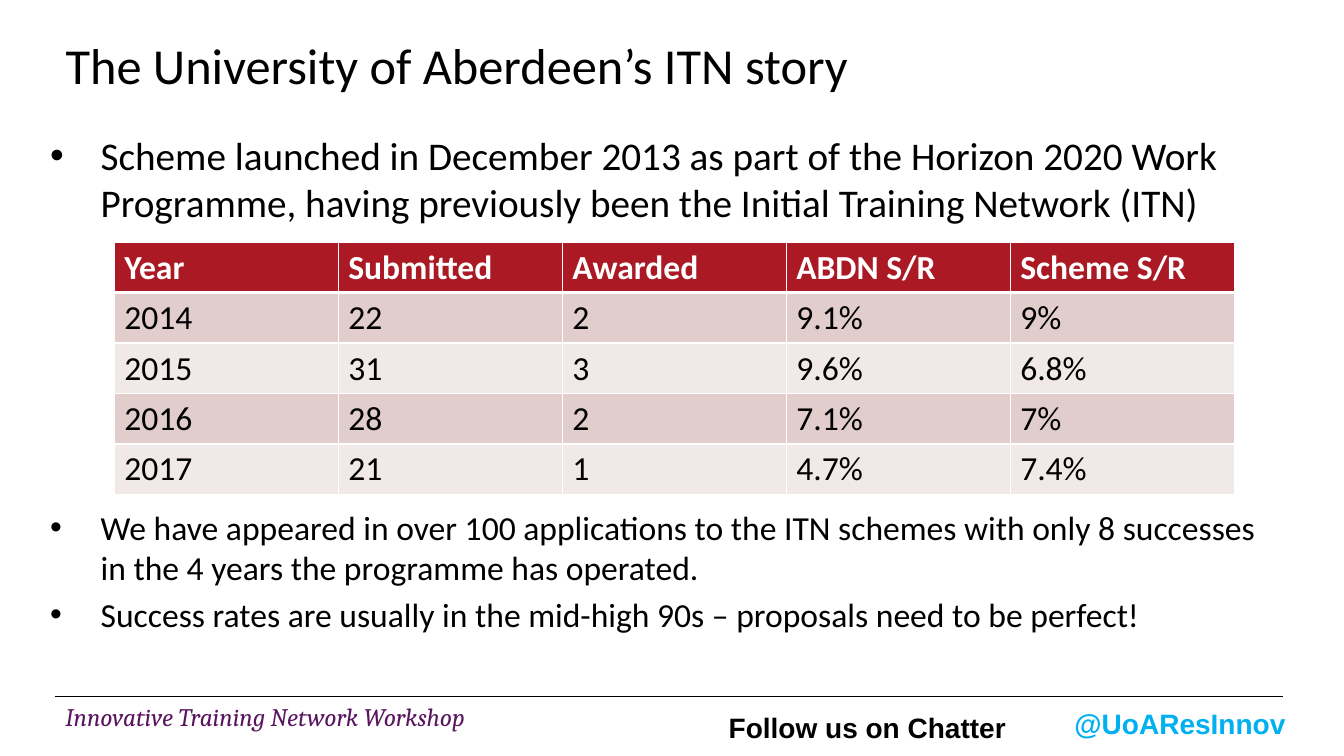
from dataclasses import dataclass

from lxml import etree
from pptx import Presentation
from pptx.dml.color import RGBColor
from pptx.enum.shapes import MSO_CONNECTOR
from pptx.enum.text import MSO_ANCHOR, PP_ALIGN
from pptx.oxml.ns import qn
from pptx.util import Pt

LEFT = PP_ALIGN.LEFT
TOP, MIDDLE = MSO_ANCHOR.TOP, MSO_ANCHOR.MIDDLE
STRAIGHT = MSO_CONNECTOR.STRAIGHT
TITLE_ONLY = 5


@dataclass(frozen=True)
class Theme:
    text: str = "000000"
    white: str = "FFFFFF"
    plum: str = "59155F"
    sky: str = "00B0F0"
    header: str = "AB1A24"
    bands: tuple = ("E2CDCD", "F1E8E8")
    body_font: str = "Calibri"
    footer_font: str = "Cambria"
    social_font: str = "Arial"
    title_size: int = 36
    lead_size: int = 28
    body_size: int = 24
    social_size: int = 20
    footer_size: int = 18


THEME = Theme()

# Text, size, space before; the second bullet leaves room for the table
BULLETS = [
    ("Scheme launched in December 2013 as part of the Horizon 2020 Work "
     "Programme, having previously been the Initial Training Network (ITN)",
     THEME.lead_size, 0),
    ("We have appeared in over 100 applications to the ITN schemes with only "
     "8 successes in the 4 years the programme has operated.",
     THEME.body_size, 201),
    ("Success rates are usually in the mid-high 90s – proposals need to be "
     "perfect!", THEME.body_size, 4.5),
]

RESULTS = [
    ("Year", "Submitted", "Awarded", "ABDN S/R", "Scheme S/R"),
    ("2014", "22", "2", "9.1%", "9%"),
    ("2015", "31", "3", "9.6%", "6.8%"),
    ("2016", "28", "2", "7.1%", "7%"),
    ("2017", "21", "1", "4.7%", "7.4%"),
]


def style(paragraph, font_name, size, color, bold=False, italic=False):
    paragraph.alignment = LEFT
    font = paragraph.font
    font.name, font.size = font_name, Pt(size)
    font.bold, font.italic = bold, italic
    font.color.rgb = RGBColor.from_string(color)


def add_title(slide, text):
    title = slide.shapes.title
    title.left, title.top = Pt(39.6), Pt(20.2)
    title.width, title.height = Pt(672), Pt(51)
    title.text_frame.text = text
    title.text_frame.vertical_anchor = MIDDLE
    style(title.text_frame.paragraphs[0], THEME.body_font, THEME.title_size,
          THEME.text)


def add_text_box(slide, left, top, width, height, anchor=TOP):
    box = slide.shapes.add_textbox(Pt(left), Pt(top), Pt(width), Pt(height))
    frame = box.text_frame
    frame.word_wrap = True
    frame.vertical_anchor = anchor
    return frame


def add_label(slide, text, area, font_name, size, color, anchor=MIDDLE,
              **emphasis):
    frame = add_text_box(slide, *area, anchor)
    frame.text = text
    style(frame.paragraphs[0], font_name, size, color, **emphasis)


def add_bullets(slide, bullets):
    frame = add_text_box(slide, 28.8, 90, 888, 395)
    for index, (text, size, space_before) in enumerate(bullets):
        paragraph = frame.add_paragraph() if index else frame.paragraphs[0]
        paragraph.text = text
        properties = paragraph._p.get_or_add_pPr()
        properties.set("marL", str(Pt(36)))
        properties.set("indent", str(-Pt(36)))
        bullet_font = etree.SubElement(properties, qn("a:buFont"))
        bullet_font.set("typeface", "Arial")
        etree.SubElement(properties, qn("a:buChar")).set("char", "•")
        paragraph.space_before = Pt(space_before)
        style(paragraph, THEME.body_font, size, THEME.text)


def set_borders(cell, widths):
    properties = cell._tc.get_or_add_tcPr()
    for index, (side, width) in enumerate(widths.items()):
        border = etree.Element(qn(f"a:{side}"), w=str(Pt(width)))
        fill = etree.SubElement(border, qn("a:solidFill"))
        etree.SubElement(fill, qn("a:srgbClr")).set("val", THEME.white)
        properties.insert(index, border)


def add_results_table(slide, rows):
    column_width, row_height = 160, 36
    columns = len(rows[0])
    table = slide.shapes.add_table(
        len(rows), columns, Pt(81.6), Pt(173),
        Pt(column_width * columns), Pt(row_height * len(rows))).table
    for row_index, values in enumerate(rows):
        is_header = row_index == 0
        fill = THEME.header if is_header else THEME.bands[(row_index - 1) % 2]
        color = THEME.white if is_header else THEME.text
        widths = {"lnL": 1, "lnR": 1, "lnT": 3 if row_index == 1 else 1,
                  "lnB": 3 if is_header else 1}
        for column_index, value in enumerate(values):
            cell = table.cell(row_index, column_index)
            cell.text = value
            cell.fill.solid()
            cell.fill.fore_color.rgb = RGBColor.from_string(fill)
            style(cell.text_frame.paragraphs[0], THEME.body_font,
                  THEME.body_size, color, bold=is_header)
            set_borders(cell, widths)


def add_rule(slide, left, right, y):
    rule = slide.shapes.add_connector(STRAIGHT, Pt(left), Pt(y), Pt(right),
                                      Pt(y))
    rule.line.color.rgb = RGBColor.from_string(THEME.text)
    rule.line.width = Pt(0.75)
    etree.SubElement(rule._element.spPr, qn("a:effectLst"))


def main():
    presentation = Presentation()
    presentation.slide_width, presentation.slide_height = Pt(960), Pt(540)
    slide = presentation.slides.add_slide(
        presentation.slide_layouts[TITLE_ONLY])

    # Title
    add_title(slide, "The University of Aberdeen’s ITN story")

    # Footer
    add_rule(slide, 39.6, 916.6, 497.5)
    add_label(slide, "Innovative Training Network Workshop",
              (39.6, 497.5, 460, 27.4), THEME.footer_font, THEME.footer_size,
              THEME.plum, anchor=TOP, italic=True)
    add_label(slide, "@UoAResInnov", (760.3, 500.8, 190, 31.7),
              THEME.social_font, THEME.social_size, THEME.sky, bold=True)
    add_label(slide, "Follow us on Chatter", (513.4, 504, 240, 31.7),
              THEME.social_font, THEME.social_size, THEME.text, bold=True)

    # Bullets and the results between them
    add_bullets(slide, BULLETS)
    add_results_table(slide, RESULTS)

    presentation.save("out.pptx")


if __name__ == "__main__":
    main()
